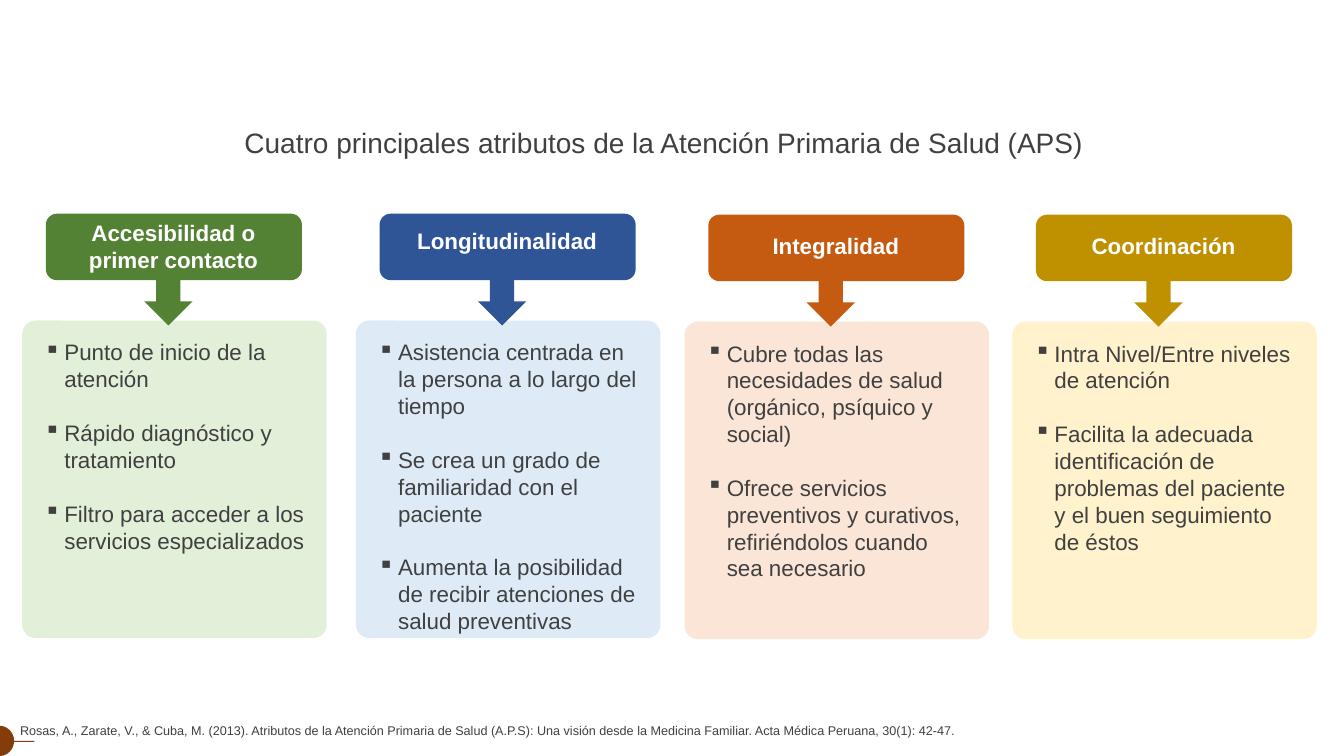
import pptx
import pptx.dml.color
import pptx.enum.shapes
import pptx.enum.text
import pptx.oxml.ns
import pptx.util
import lxml.etree

Inches = pptx.util.Inches
SHAPE = pptx.enum.shapes.MSO_SHAPE
ALIGN = pptx.enum.text.PP_ALIGN

THEME = {
    "font": "Arial", "ink": "404040", "white": "FFFFFF", "marker": "843C0B",
    "title": 20, "body": 16, "source": 9, "gap": 19.2,
}

deck = pptx.Presentation()
deck.slide_width, deck.slide_height = Inches(13.33), Inches(7.5)
slide = deck.slides.add_slide(deck.slide_layouts[6])


def add_block(kind, left, top, width, height, color, adjustments=()):
    block = slide.shapes.add_shape(
        kind, Inches(left), Inches(top), Inches(width), Inches(height))
    block.shadow.inherit = False
    block.fill.solid()
    block.fill.fore_color.rgb = pptx.dml.color.RGBColor.from_string(color)
    block.line.fill.background()
    for index, value in enumerate(adjustments):
        block.adjustments[index] = value
    return block


def add_text(lines, left, top, width, height, size, align,
             color=THEME["ink"], bold=False, wrap=True, indent=0):
    frame = slide.shapes.add_textbox(
        Inches(left), Inches(top), Inches(width), Inches(height)).text_frame
    frame.word_wrap = wrap
    frame.auto_size = pptx.enum.text.MSO_AUTO_SIZE.SHAPE_TO_FIT_TEXT
    for index, line in enumerate(lines):
        paragraph = frame.add_paragraph() if index else frame.paragraphs[0]
        paragraph.text = line
        paragraph.alignment = align
        if indent:
            properties = paragraph._p.get_or_add_pPr()
            properties.set("marL", str(Inches(indent)))
            properties.set("indent", str(-Inches(indent)))
            bullet = lxml.etree.SubElement(properties, pptx.oxml.ns.qn("a:buChar"))
            bullet.set("char", "▪")
        if index:
            paragraph.space_before = pptx.util.Pt(THEME["gap"])
        paragraph.font.name = THEME["font"]
        paragraph.font.size = pptx.util.Pt(size)
        paragraph.font.bold = bold
        paragraph.font.color.rgb = pptx.dml.color.RGBColor.from_string(color)


add_text(["Cuatro principales atributos de la Atención Primaria de Salud (APS)"],
         2.29, 1.2, 8.59, 0.44, THEME["title"], ALIGN.CENTER, wrap=False)

attributes = [
    ("Accesibilidad o primer contacto", 0.22, 2.12, 0.01, 0.64, "548235", "E2F0D9",
     ["Punto de inicio de la atención",
      "Rápido diagnóstico y tratamiento",
      "Filtro para acceder a los servicios especializados"]),
    ("Longitudinalidad", 3.53, 2.12, 0.08, 0.37, "2F5597", "DEEBF7",
     ["Asistencia centrada en la persona a lo largo del tiempo",
      "Se crea un grado de familiaridad con el paciente",
      "Aumenta la posibilidad de recibir atenciones de salud preventivas"]),
    ("Integralidad", 6.79, 2.13, 0.12, 0.37, "C55A11", "FBE5D6",
     ["Cubre todas las necesidades de salud (orgánico, psíquico y social)",
      "Ofrece servicios preventivos y curativos, refiriéndolos cuando sea necesario"]),
    ("Coordinación", 10.04, 2.13, 0.12, 0.37, "BF9000", "FFF2CC",
     ["Intra Nivel/Entre niveles de atención",
      "Facilita la adecuada identificación de problemas del paciente "
      "y el buen seguimiento de éstos"]),
]

for name, left, top, name_drop, name_height, strong, pale, points in attributes:
    add_block(SHAPE.ROUNDED_RECTANGLE, left, top + 1.06, 3.02, 3.15, pale, [0.044])
    add_block(SHAPE.DOWN_ARROW, left + 1.21, top + 0.46, 0.48, 0.65, strong)
    add_block(SHAPE.ROUNDED_RECTANGLE, left + 0.235, top, 2.54, 0.66, strong)
    add_text([name], left + 0.475, top + name_drop, 2.05, name_height,
             THEME["body"], ALIGN.CENTER, THEME["white"], bold=True)
    add_text(points, left + 0.12, top + 1.19, 2.81, 2.52,
             THEME["body"], ALIGN.LEFT, indent=0.2)

add_text(["Rosas, A., Zarate, V., & Cuba, M. (2013). Atributos de la Atención Primaria "
          "de Salud (A.P.S): Una visión desde la Medicina Familiar. "
          "Acta Médica Peruana, 30(1): 42-47."],
         0.1, 7.12, 12.95, 0.25, THEME["source"], ALIGN.JUSTIFY)

add_block(SHAPE.RECTANGLE, 0.02, 7.35, 0.32, 0.01, THEME["marker"])
page_marker = add_block(SHAPE.PIE, -0.15, 7.2, 0.29, 0.3, THEME["marker"], [54.215, 162])
page_marker.rotation = 180

deck.save("out.pptx")
